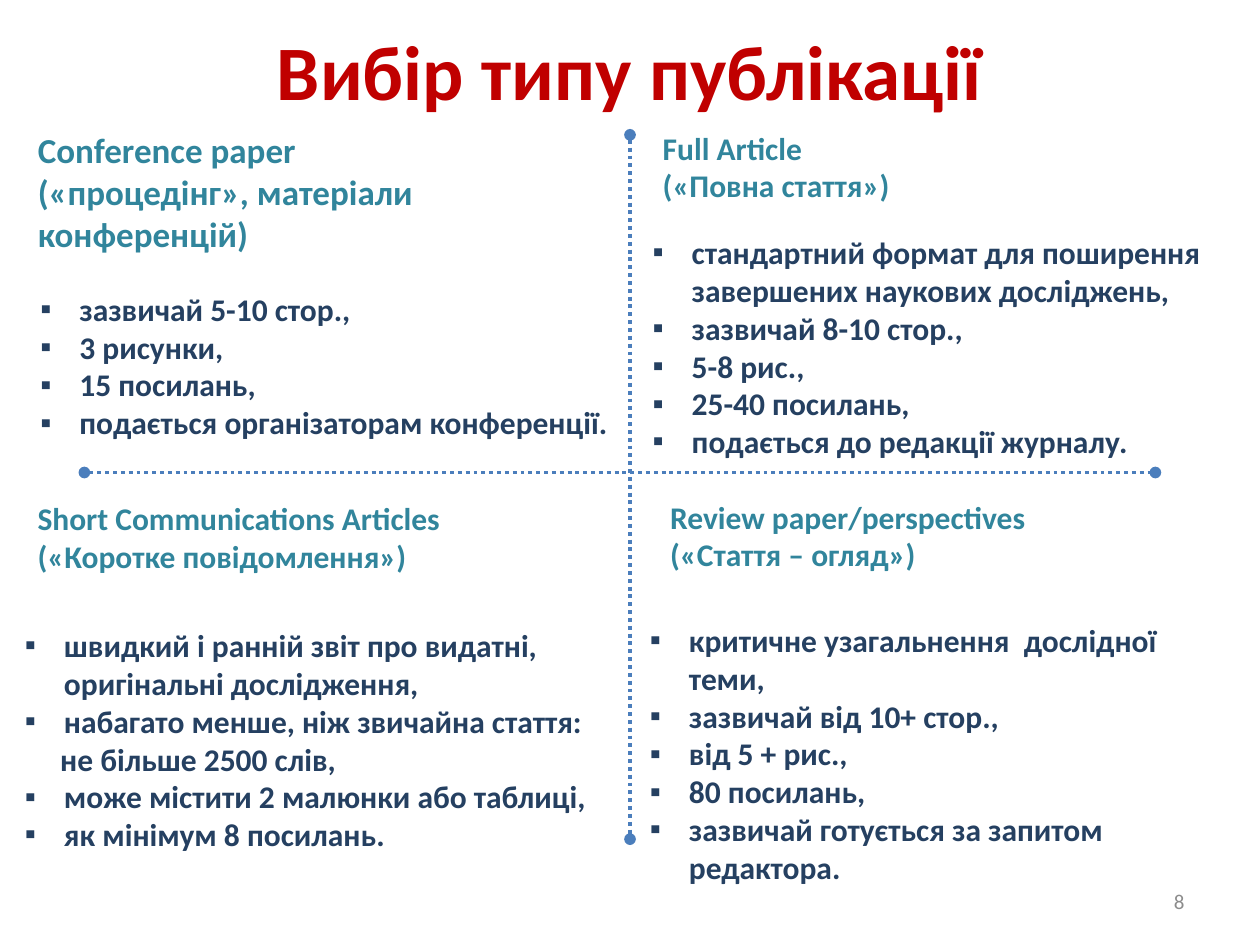
"""Build a four-quadrant slide comparing types of scientific publication."""
from dataclasses import dataclass

from lxml import etree
from pptx import Presentation
from pptx.dml.color import RGBColor
from pptx.enum.dml import MSO_LINE
from pptx.enum.shapes import MSO_CONNECTOR
from pptx.enum.text import MSO_ANCHOR, MSO_AUTO_SIZE, PP_ALIGN
from pptx.oxml.ns import qn
from pptx.util import Inches, Pt

LEFT, CENTER, RIGHT = PP_ALIGN.LEFT, PP_ALIGN.CENTER, PP_ALIGN.RIGHT
TOP, MIDDLE = MSO_ANCHOR.TOP, MSO_ANCHOR.MIDDLE
NO_AUTOFIT = MSO_AUTO_SIZE.NONE
STRAIGHT = MSO_CONNECTOR.STRAIGHT
DOTTED = MSO_LINE.ROUND_DOT
COMPARISON_LAYOUT = 4


@dataclass(frozen=True)
class Theme:
    """Hold the fonts, colours and sizes of the slide."""
    font: str = "Calibri"
    title: str = "C00000"
    heading: str = "31859C"
    body: str = "254061"
    line: str = "4B7EBC"
    number: str = "8C8C8C"
    title_size: int = 44
    lead_size: int = 20
    text_size: int = 18
    number_size: int = 12
    line_width: float = 2.25
    bullet: str = "▪"
    bullet_indent: float = 0.31
    continuation_indent: float = 0.28


class SlideBuilder:
    """Add styled elements to the current slide."""

    def __init__(self, slide, theme):
        self.slide = slide
        self.theme = theme

    def text(self, lines, box, size, color, bold=True, align=LEFT,
             anchor=TOP, placeholder=None, bulleted=False):
        left, top, width, height = map(Inches, box)
        if placeholder is None:
            shape = self.slide.shapes.add_textbox(left, top, width, height)
        else:
            shape = self.slide.placeholders[placeholder]
            shape.left, shape.top, shape.width, shape.height = left, top, width, height
        frame = shape.text_frame
        frame.word_wrap = True
        frame.auto_size = NO_AUTOFIT
        frame.vertical_anchor = anchor
        for index, line in enumerate(lines):
            paragraph = frame.add_paragraph() if index else frame.paragraphs[0]
            if bulleted:
                self.indent(paragraph, line not in CONTINUATIONS)
            paragraph.alignment = align
            paragraph.space_before = Pt(0)
            run = paragraph.add_run()
            run.text = line
            run.font.name = self.theme.font
            run.font.size = Pt(size)
            run.font.bold = bold
            run.font.color.rgb = RGBColor.from_string(color)

    def indent(self, paragraph, has_bullet):
        properties = paragraph._p.get_or_add_pPr()
        if has_bullet:
            margin = Inches(self.theme.bullet_indent)
            properties.set("indent", str(-margin))
            etree.SubElement(properties, qn("a:buFont"), typeface="Arial")
            etree.SubElement(properties, qn("a:buChar"), char=self.theme.bullet)
        else:
            margin = Inches(self.theme.continuation_indent)
            properties.set("indent", "0")
            etree.SubElement(properties, qn("a:buNone"))
        properties.set("marL", str(margin))

    def title(self, line, box):
        self.text([line], box, self.theme.title_size, self.theme.title,
                  align=CENTER, anchor=MIDDLE, placeholder=0)

    def heading(self, lines, box, size, placeholder=None):
        self.text(lines, box, size, self.theme.heading, placeholder=placeholder)

    def bullets(self, lines, box, placeholder=None):
        self.text(lines, box, self.theme.text_size, self.theme.body,
                  placeholder=placeholder, bulleted=True)

    def number(self, line, box):
        self.text([line], box, self.theme.number_size, self.theme.number,
                  bold=False, align=RIGHT, anchor=MIDDLE)

    def divider(self, *ends):
        connector = self.slide.shapes.add_connector(STRAIGHT, *map(Inches, ends))
        line = connector.line
        line.color.rgb = RGBColor.from_string(self.theme.line)
        line.width = Pt(self.theme.line_width)
        line.dash_style = DOTTED
        outline = line._get_or_add_ln()
        for end in ("a:headEnd", "a:tailEnd"):
            etree.SubElement(outline, qn(end), type="oval")
        etree.SubElement(connector._element.spPr, qn("a:effectLst"))


THEME = Theme()
CONTINUATIONS = {"не більше 2500 слів,"}

# heading lines, box, size, placeholder; list lines, box, placeholder
QUADRANTS = [
    ((["Conference paper", "(«процедінг», матеріали конференцій)"],
      (0.2, 0.97, 4.8, 1.11), THEME.lead_size, 1),
     (["зазвичай 5-10 стор.,", "3 рисунки,", "15 посилань,",
       "подається організаторам конференції."],
      (0.22, 2.25, 5, 1.31), 2)),
    ((["Full Article", "(«Повна стаття»)"],
      (5.16, 0.97, 4.72, 0.71), THEME.text_size, 3),
     (["стандартний формат для поширення завершених наукових досліджень,",
       "зазвичай 8-10 стор.,", "5-8 рис.,", "25-40 посилань,",
       "подається до редакції журналу."],
      (5.08, 1.8, 5, 1.92), 4)),
    ((["Short Communications Articles", "(«Коротке повідомлення»)"],
      (0.2, 3.91, 3.44, 0.71), THEME.text_size),
     (["швидкий і ранній звіт про видатні, оригінальні дослідження,",
       "набагато менше, ніж звичайна стаття:", "не більше 2500 слів,",
       "може містити 2 малюнки або таблиці,", "як мінімум 8 посилань."],
      (0.1, 4.92, 5, 1.92))),
    ((["Review paper/perspectives", "(«Стаття – огляд»)"],
      (5.22, 3.9, 4.61, 0.71), THEME.text_size),
     (["критичне узагальнення  дослідної теми,", "зазвичай від 10+ стор.,",
       "від 5 + рис.,", "80 посилань,",
       "зазвичай готується за запитом редактора."],
      (5.06, 4.88, 4.82, 2.22))),
]


def main():
    presentation = Presentation()
    presentation.slide_width = Inches(10)
    presentation.slide_height = Inches(7.5)
    layout = presentation.slide_layouts[COMPARISON_LAYOUT]
    builder = SlideBuilder(presentation.slides.add_slide(layout), THEME)
    builder.title("Вибір типу публікації", (0, 0.13, 10, 0.84))
    for heading, bullets in QUADRANTS:
        builder.heading(*heading)
        builder.bullets(*bullets)
    builder.divider(0.67, 3.75, 9.17, 3.75)
    builder.divider(5, 1.07, 5, 6.66)
    builder.number("8", (7.17, 6.95, 2.33, 0.4))
    presentation.save("out.pptx")


if __name__ == "__main__":
    main()
